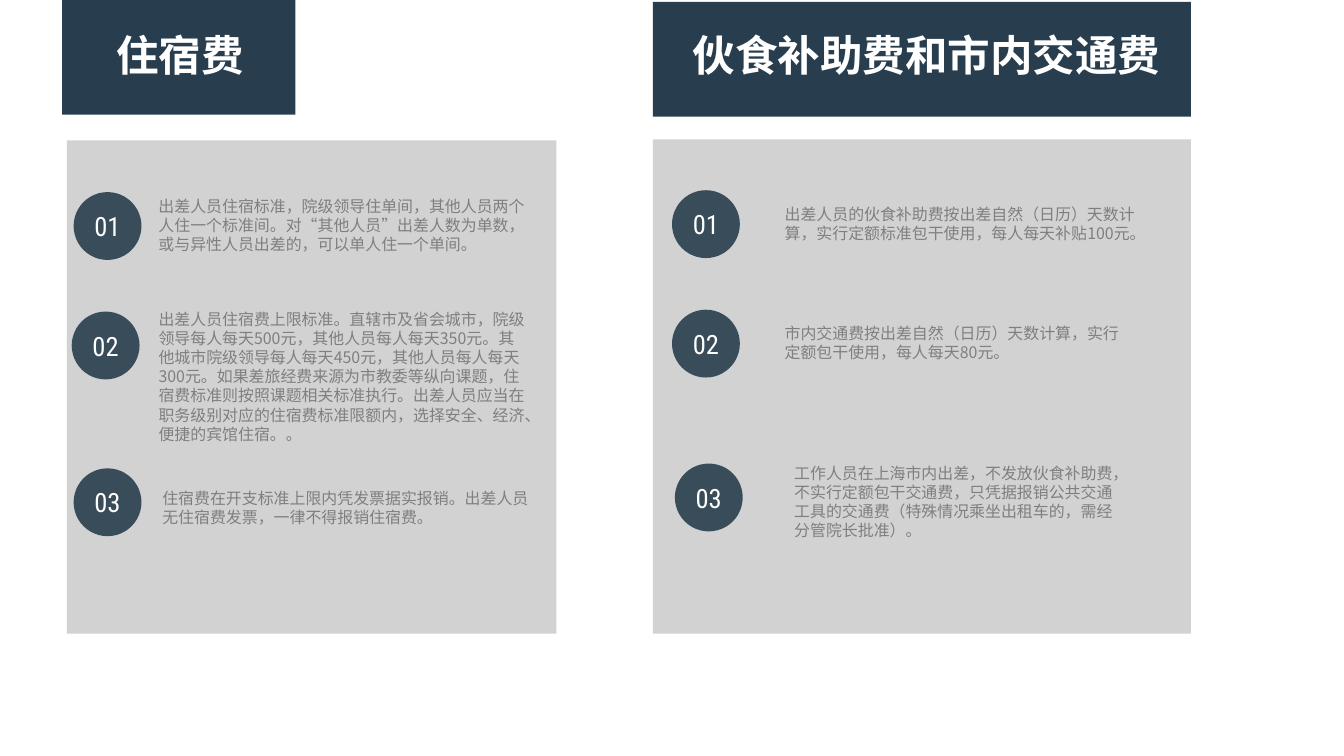
from pptx import Presentation
from pptx.dml.color import RGBColor
from pptx.enum.shapes import MSO_SHAPE
from pptx.enum.text import MSO_ANCHOR, MSO_AUTO_SIZE, PP_ALIGN
from pptx.oxml.ns import qn
from pptx.util import Pt
from lxml.etree import SubElement

PX = 9144  # 100 px to the inch
SANS, NUM = "Noto Sans CJK SC", "Roboto Condensed"
COLORS = {"navy": "283E4E", "panel": "BFBFBF", "body": "7F7F7F", "white": "FFFFFF"}

deck = Presentation()
deck.slide_width, deck.slide_height = 1406 * PX, 791 * PX
slide = deck.slides.add_slide(deck.slide_layouts[6])


def add_block(kind, box, color, alpha=100):
    shape = slide.shapes.add_shape(kind, *[n * PX for n in box])
    shape.shadow.inherit = False
    shape.line.fill.background()
    shape.fill.solid()
    shape.fill.fore_color.rgb = RGBColor.from_string(COLORS[color])
    if alpha < 100:
        tint = shape.fill._xPr.find(".//" + qn("a:srgbClr"))
        SubElement(tint, qn("a:alpha")).set("val", str(alpha * 1000))
    return shape


def add_text(shape, text, size, font, color, bold=False):
    para = shape.text_frame.paragraphs[0]
    run = para.add_run()
    run.text = text
    run.font.size = Pt(size)
    run.font.bold = bold
    run.font.name = font
    run.font.color.rgb = RGBColor.from_string(COLORS[color])
    SubElement(run._r.get_or_add_rPr(), qn("a:ea")).set("typeface", font)
    return para


# Each column: title, banner, title box, panel, items (circle left and top, text box, text)
columns = [
    ("住宿费", (65, 0, 244, 120), (112, 25, 155, 64), (70, 147, 512, 516), [
        (77, 201, (156, 201, 417, 71),
         "出差人员住宿标准，院级领导住单间，其他人员两个人住一个标准间。"
         "对“其他人员”出差人数为单数，或与异性人员出差的，可以单人住一个单间。"),
        (75, 326, (156, 319, 405, 151),
         "出差人员住宿费上限标准。直辖市及省会城市，院级领导每人每天500元，"
         "其他人员每人每天350元。其他城市院级领导每人每天450元，其他人员每人每天300元。"
         "如果差旅经费来源为市教委等纵向课题，住宿费标准则按照课题相关标准执行。"
         "出差人员应当在职务级别对应的住宿费标准限额内，选择安全、经济、便捷的宾馆住宿。。"),
        (77, 490, (160, 506, 404, 50),
         "住宿费在开支标准上限内凭发票据实报销。"
         "出差人员无住宿费发票，一律不得报销住宿费。"),
    ]),
    ("伙食补助费和市内交通费", (683, 2, 563, 120), (715, 25, 514, 64), (683, 146, 563, 517), [
        (703, 199, (811, 209, 396, 50),
         "出差人员的伙食补助费按出差自然（日历）天数计算，"
         "实行定额标准包干使用，每人每天补贴100元。"),
        (703, 324, (811, 334, 372, 50),
         "市内交通费按出差自然（日历）天数计算，实行定额包干使用，每人每天80元。"),
        (706, 485, (821, 480, 362, 91),
         "工作人员在上海市内出差，不发放伙食补助费，不实行定额包干交通费，"
         "只凭据报销公共交通工具的交通费（特殊情况乘坐出租车的，需经分管院长批准）。"),
    ]),
]

for title, banner, head, panel, items in columns:
    # Panel and banner
    add_block(MSO_SHAPE.RECTANGLE, panel, "panel", 70)
    add_block(MSO_SHAPE.RECTANGLE, banner, "navy")

    # Title
    label = slide.shapes.add_textbox(*[n * PX for n in head])
    label.text_frame.word_wrap = False
    label.text_frame.auto_size = MSO_AUTO_SIZE.SHAPE_TO_FIT_TEXT
    add_text(label, title, 32, SANS, "white", True)

    # Numbered items
    for count, (left, top, box, text) in enumerate(items, 1):
        dot = add_block(MSO_SHAPE.OVAL, (left, top, 71, 71), "navy", 90)
        dot.text_frame.vertical_anchor = MSO_ANCHOR.MIDDLE
        add_text(dot, f"{count:02}", 20, NUM, "white").alignment = PP_ALIGN.CENTER

        note = slide.shapes.add_textbox(*[n * PX for n in box])
        note.text_frame.word_wrap = True
        note.text_frame.auto_size = MSO_AUTO_SIZE.SHAPE_TO_FIT_TEXT
        add_text(note, text, 12, SANS, "body")

deck.save("out.pptx")
